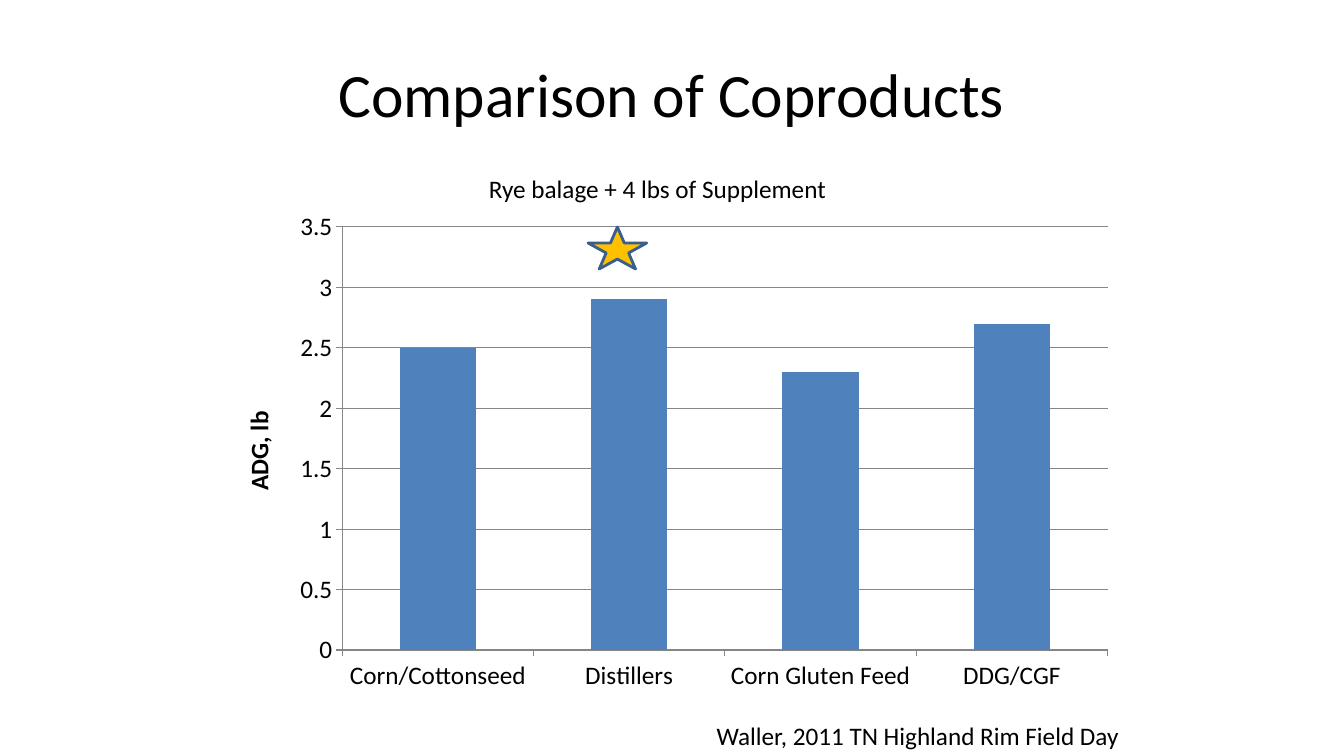
import pptx
import pptx.chart.data
import pptx.dml.color
import pptx.enum.chart
import pptx.enum.shapes
import pptx.enum.text
import pptx.util

Cm, Pt = pptx.util.Cm, pptx.util.Pt
RGBColor = pptx.dml.color.RGBColor

# Content
TITLE = "Comparison of Coproducts"
AXIS_TITLE = "ADG, lb"
GAINS = {
    "Corn/Cottonseed": 2.5,
    "Distillers": 2.9,
    "Corn Gluten Feed": 2.3,
    "DDG/CGF": 2.7,
}
# text, left, top, width, height in cm
CAPTIONS = [
    ("Waller, 2011 TN Highland Rim Field Day", 17.81, 18.03, 10.77, 1.02),
    ("Rye balage + 4 lbs of Supplement", 12.07, 4.24, 9.12, 1.02),
]

# Style
FONT = "Calibri"
BLACK = RGBColor(0x00, 0x00, 0x00)
WHITE = RGBColor(0xFF, 0xFF, 0xFF)
BLUE = RGBColor(0x4F, 0x81, 0xBD)
GRAY = RGBColor(0x86, 0x86, 0x86)
GOLD = RGBColor(0xFF, 0xC0, 0x00)
STAR_EDGE = RGBColor(0x3A, 0x5F, 0x8C)


def set_font(font, size, bold=False):
    font.name = FONT
    font.size = Pt(size)
    font.bold = bold
    font.color.rgb = BLACK


prs = pptx.Presentation()
prs.slide_width, prs.slide_height = Cm(33.87), Cm(19.05)
s = prs.slides.add_slide(prs.slide_layouts[5])

# Title
title = s.shapes.title
title.left, title.top, title.width, title.height = Cm(1.69), Cm(0.76), Cm(30.48), Cm(3.18)
tf = title.text_frame
tf.text = TITLE
tf.vertical_anchor = pptx.enum.text.MSO_ANCHOR.MIDDLE
p = tf.paragraphs[0]
p.alignment = pptx.enum.text.PP_ALIGN.CENTER
set_font(p.font, 44)

# Column chart
data = pptx.chart.data.CategoryChartData()
data.categories = list(GAINS)
data.add_series("Series 1", list(GAINS.values()))
chart = s.shapes.add_chart(
    pptx.enum.chart.XL_CHART_TYPE.COLUMN_CLUSTERED,
    Cm(5.51), Cm(5.08), Cm(22.86), Cm(12.57), data).chart
set_font(chart.font, 18)
chart.has_title = False
chart.has_legend = False

plot = chart.plots[0]
plot.gap_width = 150
plot.vary_by_categories = False
bars = plot.series[0]
bars.format.fill.solid()
bars.format.fill.fore_color.rgb = BLUE

# Axes
value_axis = chart.value_axis
value_axis.minimum_scale, value_axis.maximum_scale = 0, 3.5
value_axis.major_unit = 0.5
value_axis.has_major_gridlines = True
value_axis.major_gridlines.format.line.color.rgb = GRAY
for axis in (chart.category_axis, value_axis):
    axis.major_tick_mark = pptx.enum.chart.XL_TICK_MARK.OUTSIDE
    axis.format.line.color.rgb = GRAY
tf = value_axis.axis_title.text_frame
tf.text = AXIS_TITLE
set_font(tf.paragraphs[0].font, 18, bold=True)

# Captions
for text, *box in CAPTIONS:
    tf = s.shapes.add_textbox(*map(Cm, box)).text_frame
    tf.word_wrap = False
    tf.auto_size = pptx.enum.text.MSO_AUTO_SIZE.SHAPE_TO_FIT_TEXT
    tf.text = text
    set_font(tf.paragraphs[0].font, 18)

# Star over the best result
star = s.shapes.add_shape(
    pptx.enum.shapes.MSO_SHAPE.STAR_5_POINT, Cm(14.82), Cm(5.72), Cm(1.48), Cm(1.06))
star.shadow.inherit = False
star.fill.solid()
star.fill.fore_color.rgb = GOLD
star.line.color.rgb = STAR_EDGE
star.line.width = Pt(2)

prs.save("out.pptx")
